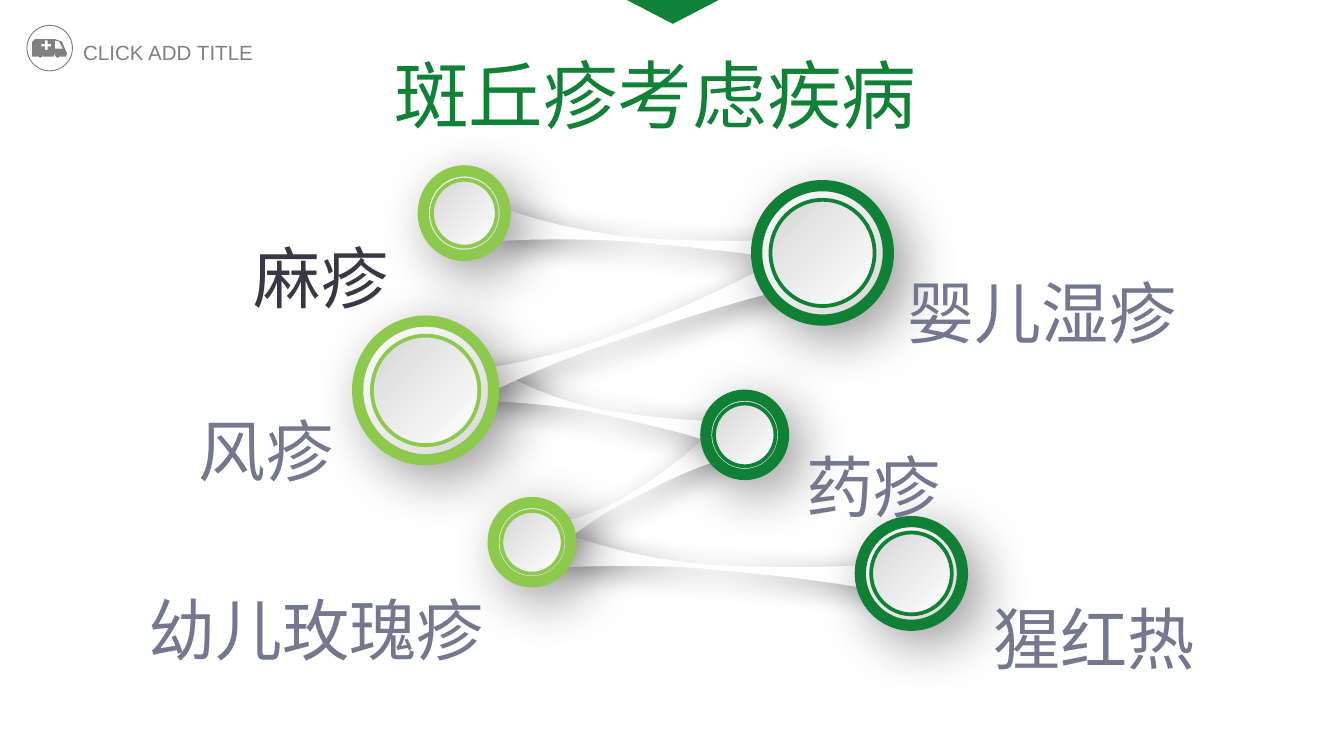
from dataclasses import dataclass

from lxml import etree
from pptx import Presentation
from pptx.dml.color import RGBColor
from pptx.enum.shapes import MSO_SHAPE
from pptx.enum.text import MSO_AUTO_SIZE, PP_ALIGN
from pptx.oxml.ns import qn
from pptx.util import Cm, Pt

OVAL = MSO_SHAPE.OVAL
WEDGE = MSO_SHAPE.ISOSCELES_TRIANGLE
LEFT, MID, RIGHT = PP_ALIGN.LEFT, PP_ALIGN.CENTER, PP_ALIGN.RIGHT
GROW = MSO_AUTO_SIZE.SHAPE_TO_FIT_TEXT


@dataclass(frozen=True)
class Theme:
    green: str = "108036"
    title: str = "108136"
    lime: str = "8CC94C"
    grey: str = "808080"
    slate: str = "74778D"
    dark: str = "373843"
    white: str = "FFFFFF"
    silver: str = "D7D7D7"
    sans: str = "Arial"
    lato: str = "Lato"
    han: str = "Noto Sans CJK SC"
    small: int = 11
    label: int = 36
    head: int = 40


T = Theme()

# Outline of a link in a unit box: start, then cubic curves along each edge
TOP = [(0, 0), (.11, .32), (.26, .54), (.43, .56), (.59, .54), (.89, .3), (1, 0)]
BASE = [(1, 1), (.9, .71), (.58, .7), (.42, .68), (.25, .7), (.09, .88), (0, 1)]

# Outlines of the van in a unit box
BODY = [(0, .15), (.08, 0), (.65, 0), (.85, .15), (1, .85), (.96, 1),
        (.81, 1), (.78, .83), (.73, .79), (.65, .83), (.61, 1),
        (.31, 1), (.28, .83), (.23, .79), (.18, .83), (.15, 1), (0, 1)]
PANE = [(.65, .08), (.77, .15), (.88, .54), (.65, .54)]
CROSS = [(.36, .08), (.44, .08), (.44, .28), (.54, .28), (.54, .42), (.44, .42),
         (.44, .62), (.36, .62), (.36, .42), (.26, .42), (.26, .28), (.36, .28)]


def rgb(code):
    return RGBColor.from_string(code)


def paint(shape, fill=None, line=None, width=1):
    shape.shadow.inherit = False
    if fill:
        shape.fill.solid()
        shape.fill.fore_color.rgb = rgb(fill)
    else:
        shape.fill.background()
    if line:
        shape.line.color.rgb = rgb(line)
        shape.line.width = Pt(width)
    else:
        shape.line.fill.background()


def shade(shape, blur, dist):
    effects = shape.element.spPr.find(qn("a:effectLst"))
    outer = etree.SubElement(effects, qn("a:outerShdw"), blurRad=str(Pt(blur)),
                             dist=str(Pt(dist)), dir="2700000", algn="tl",
                             rotWithShape="0")
    color = etree.SubElement(outer, qn("a:srgbClr"), val="000000")
    etree.SubElement(color, qn("a:alpha"), val="40000")


def add(shapes, kind, box):
    return shapes.add_shape(kind, *map(Cm, box))


def trace(shapes, loops, box):
    """Draw closed loops, given in unit coordinates, inside the box."""
    x, y, w, h = box
    pen = None
    for loop in loops:
        spots = [(Cm(x + u * w), Cm(y + v * h)) for u, v in loop]
        if pen is None:
            pen = shapes.build_freeform(*spots[0])
        else:
            pen.move_to(*spots[0])
        pen.add_line_segments(spots[1:], close=True)
    return pen.convert_to_shape()


def curve(knots, steps=10):
    """Points along a chain of cubic curves."""
    spots = [knots[0]]
    for i in range(0, len(knots) - 1, 3):
        for k in range(1, steps + 1):
            t = k / steps
            s = 1 - t
            mix = (s ** 3, 3 * s * s * t, 3 * s * t * t, t ** 3)
            spots.append(tuple(sum(m * p[axis] for m, p in zip(mix, knots[i:i + 4]))
                               for axis in (0, 1)))
    return spots


def write(shapes, box, text, size, color, font, align=LEFT, space=1.0, wrap=True):
    area = shapes.add_textbox(*map(Cm, box))
    frame = area.text_frame
    frame.word_wrap = wrap
    frame.auto_size = GROW
    frame.text = text
    para = frame.paragraphs[0]
    para.alignment = align
    para.line_spacing = space
    run = para.runs[0]
    run.font.size = Pt(size)
    run.font.color.rgb = rgb(color)
    run.font.name = font
    etree.SubElement(run.font._element, qn("a:ea"), typeface=T.han)
    return frame


def badge(shapes, box):
    """Van in a ring, with the caption beside it."""
    x, y, side, _ = box
    for left in (.53, .2):
        paint(add(shapes, OVAL, (x + left, y + .51, .1, .1)), T.grey)
    paint(trace(shapes, [BODY, PANE, CROSS], (x + .1, y + .26, .66, .33)), T.grey)
    paint(add(shapes, OVAL, (x, y, side, side)), line=T.grey, width=.5)
    write(shapes, (x + .81, y + .05, 4.06, .71), "CLICK ADD TITLE",
          T.small, T.grey, T.sans, space=1.2, wrap=False)


def link(shapes, box, turn):
    band = trace(shapes, [curve(TOP) + curve(BASE)], box)
    band.rotation = turn
    paint(band, T.white)
    shade(band, 15, 5)


def disc(shapes, box, color):
    """Raised ring with a smaller, sunken one in its centre."""
    x, y, w, h = box
    for part, width, angle in ((1, 6, 45), (.79, 2, 225)):
        edge = (1 - part) / 2
        ring = add(shapes, OVAL, (x + edge * w, y + edge * h, part * w, part * h))
        paint(ring, line=color, width=width)
        ring.fill.gradient()
        ring.fill.gradient_angle = 360 - angle
        for stop, tone in zip(ring.fill.gradient_stops, (T.white, T.silver)):
            stop.color.rgb = rgb(tone)
        if part == 1:
            shade(ring, 30, 10)


def label(shapes, box, text, align, color=T.slate, font=T.han):
    frame = write(shapes, box, text, T.label, color, font, align, 1.3)
    frame.margin_left = frame.margin_right = Cm(.18)
    frame.margin_top = frame.margin_bottom = Cm(.1)


def header(shapes, box):
    """Title with the wedge above it."""
    x, y, w, h = box
    write(shapes, box, "斑丘疹考虑疾病", T.head, T.title, T.sans, MID, wrap=False)
    wedge = add(shapes, WEDGE, (x + 4.65, y - .82, 1.85, .48))
    wedge.rotation = 180
    paint(wedge, T.title)


LINKS = [((10.62, 10.34, 6.32, .66), 4.9),
         ((9.98, 8.99, 3.84, .64), -28.1),
         ((9.25, 7.44, 4.75, .64), 11.8),
         ((9.4, 4.17, 6.32, .66), 4.9),
         ((8.05, 5.79, 7.57, .84), -19.1)]
DISCS = [((8, 3.23, 1.55, 1.6), T.lime),
         ((14.3, 3.51, 2.49, 2.54), T.green),
         ((6.76, 6.07, 2.57, 2.62), T.lime),
         ((13.34, 7.47, 1.47, 1.5), T.green),
         ((9.32, 9.5, 1.47, 1.5), T.lime),
         ((16.26, 9.86, 1.93, 1.96), T.green)]
LABELS = [((18.59, 10.74, 5.51, 2.01), "猩红热", LEFT),
          ((2.57, 10.57, 6.76, 2.18), "幼儿玫瑰疹", RIGHT),
          ((15.06, 7.87, 5.51, 2.01), "药疹", LEFT),
          ((.97, 7.19, 5.51, 2.01), "风疹", RIGHT),
          ((16.97, 4.57, 5.51, 2.01), "婴儿湿疹", LEFT),
          ((2.01, 3.91, 5.51, 2.01), "麻疹", RIGHT, T.dark, T.lato)]


def main():
    deck = Presentation()
    deck.slide_width, deck.slide_height = Cm(25.4), Cm(14.29)
    shapes = deck.slides.add_slide(deck.slide_layouts[6]).shapes
    badge(shapes, (.51, .48, .86, .86))
    for draw, rows in ((link, LINKS), (disc, DISCS), (label, LABELS)):
        for row in rows:
            draw(shapes, *row)
    header(shapes, (7.14, .79, 10.49, 1.96))
    deck.save("out.pptx")


if __name__ == "__main__":
    main()
